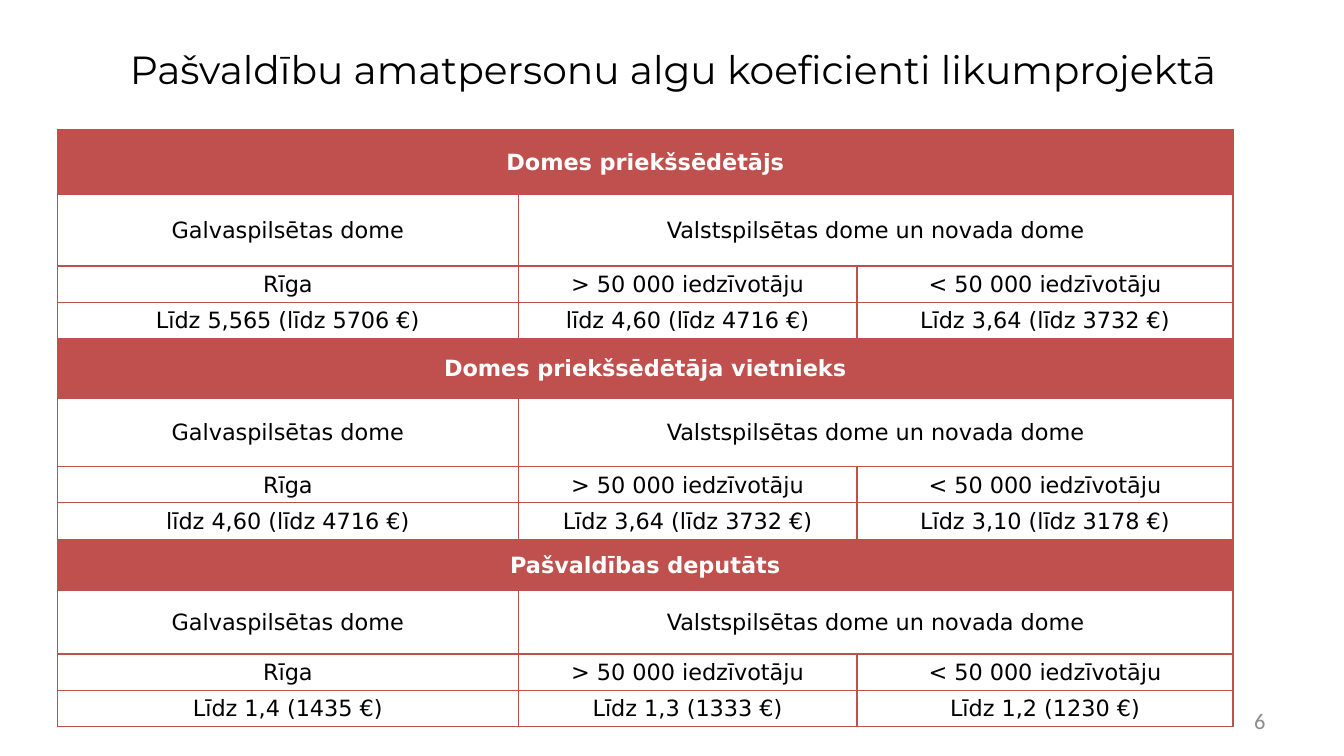
"""Build the slide on salary coefficients of municipal officials."""
import pptx
import pptx.util
import pptx.dml.color
import pptx.enum.text
import pptx.oxml
import pptx.oxml.ns
from pptx.util import Inches

RED = "C0504D"
WHITE = "FFFFFF"
BLACK = "000000"
CENTER = pptx.enum.text.PP_ALIGN.CENTER
RIGHT = pptx.enum.text.PP_ALIGN.RIGHT
MIDDLE = pptx.enum.text.MSO_ANCHOR.MIDDLE


def color(value):
    return pptx.dml.color.RGBColor.from_string(value)


def write(frame, text, font, size, text_color, alignment=CENTER, bold=False):
    frame.word_wrap = True
    paragraph = frame.paragraphs[0]
    paragraph.text = text
    paragraph.alignment = alignment
    paragraph.font.name = font
    paragraph.font.size = pptx.util.Pt(size)
    paragraph.font.bold = bold
    paragraph.font.color.rgb = color(text_color)


presentation = pptx.Presentation()
presentation.slide_width = Inches(13.33)
presentation.slide_height = Inches(7.5)
slide = presentation.slides.add_slide(presentation.slide_layouts[6])

labels = [
    ("Pašvaldību amatpersonu algu koeficienti likumprojektā",
     (0.25, 0.3, 12.85, 0.76), "Montserrat", 28, BLACK, CENTER),
    ("6", (9.54, 6.95, 3.11, 0.4), "Calibri", 16, "8C8C8C", RIGHT),
]
for text, box, font, size, text_color, alignment in labels:
    shape = slide.shapes.add_textbox(*map(Inches, box))
    shape.text_frame.vertical_anchor = MIDDLE
    write(shape.text_frame, text, font, size, text_color, alignment)

sections = [
    ("Domes priekšsēdētājs", 0.64, 0.71,
     ["Līdz 5,565 (līdz 5706 €)", "līdz 4,60 (līdz 4716 €)", "Līdz 3,64 (līdz 3732 €)"]),
    ("Domes priekšsēdētāja vietnieks", 0.59, 0.68,
     ["līdz 4,60 (līdz 4716 €)", "Līdz 3,64 (līdz 3732 €)", "Līdz 3,10 (līdz 3178 €)"]),
    ("Pašvaldības deputāts", 0.51, 0.63,
     ["Līdz 1,4 (1435 €)", "Līdz 1,3 (1333 €)", "Līdz 1,2 (1230 €)"]),
]
councils = ["Galvaspilsētas dome", "Valstspilsētas dome un novada dome", ""]
populations = ["Rīga", "> 50 000 iedzīvotāju", "< 50 000 iedzīvotāju"]
rows = []
for position, heading_height, council_height, coefficients in sections:
    rows += [
        (heading_height, [position, "", ""]),
        (council_height, councils),
        (0.36, populations),
        (0.36, coefficients),
    ]

table = slide.shapes.add_table(
    len(rows), 3, Inches(0.57), Inches(1.29), Inches(11.66), Inches(5.92)).table
table.first_row = False
table.horz_banding = False
for column, width in zip(table.columns, (4.57, 3.36, 3.73)):
    column.width = Inches(width)

for row_index, (height, texts) in enumerate(rows):
    table.rows[row_index].height = Inches(height)
    is_heading = row_index % 4 == 0
    for column_index, text in enumerate(texts):
        cell = table.cell(row_index, column_index)
        cell.vertical_anchor = MIDDLE
        cell.margin_left = cell.margin_right = cell.margin_top = Inches(0.01)
        cell.margin_bottom = 0
        write(cell.text_frame, text, "DejaVu Sans", 16,
              WHITE if is_heading else BLACK, bold=is_heading)
        properties = cell._tc.get_or_add_tcPr()
        for side in ("lnL", "lnR", "lnT", "lnB"):
            properties.append(pptx.oxml.parse_xml(
                f'<a:{side} {pptx.oxml.ns.nsdecls("a")} w="12700"><a:solidFill>'
                f'<a:srgbClr val="{RED}"/></a:solidFill></a:{side}>'))
        cell.fill.solid()
        cell.fill.fore_color.rgb = color(RED if is_heading else WHITE)

for top in range(0, len(rows), 4):
    table.cell(top, 0).merge(table.cell(top, 2))
    table.cell(top + 1, 1).merge(table.cell(top + 1, 2))

presentation.save("out.pptx")
